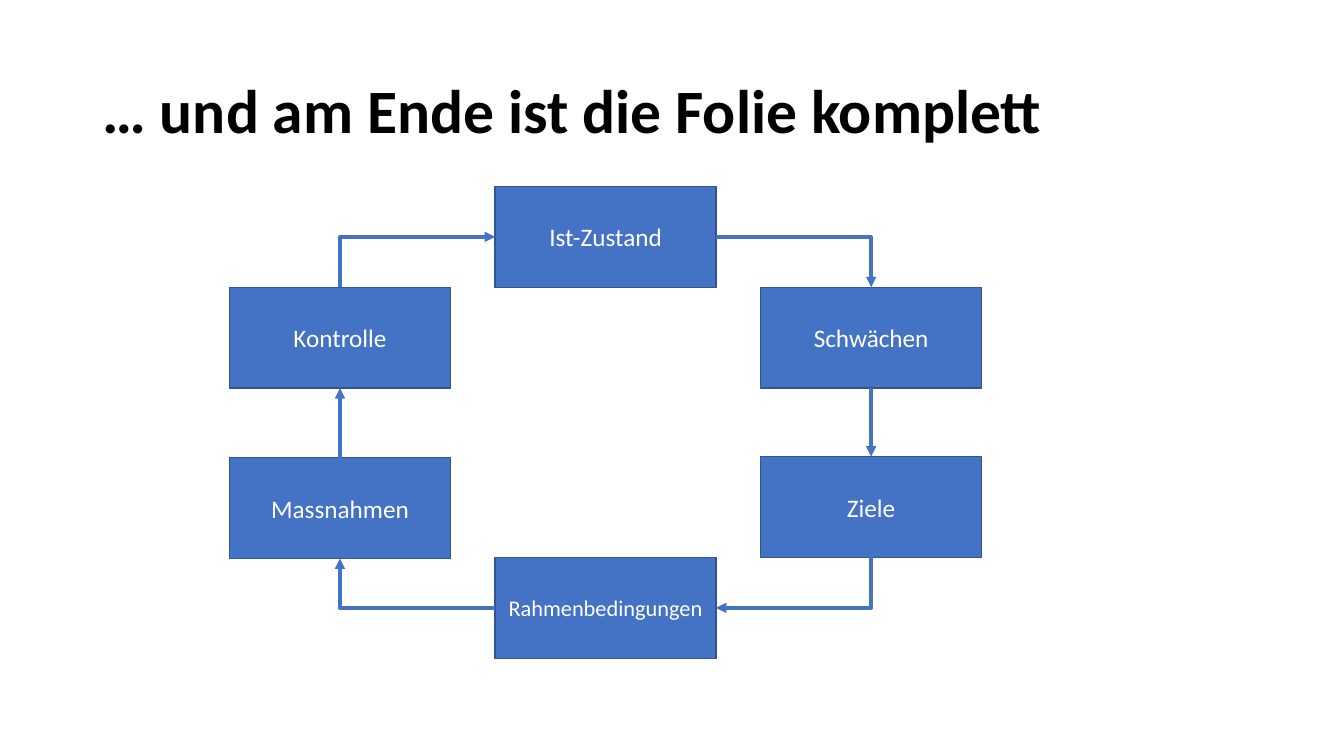
from lxml import etree
from pptx import Presentation
from pptx.dml.color import RGBColor
from pptx.enum.shapes import MSO_CONNECTOR, MSO_SHAPE
from pptx.enum.text import MSO_ANCHOR, PP_ALIGN
from pptx.oxml.ns import qn
from pptx.util import Pt

RECTANGLE = MSO_SHAPE.RECTANGLE
STRAIGHT, ELBOW = MSO_CONNECTOR.STRAIGHT, MSO_CONNECTOR.ELBOW
MIDDLE = MSO_ANCHOR.MIDDLE
LEFT, CENTER = PP_ALIGN.LEFT, PP_ALIGN.CENTER
TOP_SIDE, LEFT_SIDE, BOTTOM_SIDE, RIGHT_SIDE = range(4)

COLORS = {"title": "000000", "step": "4472C4", "border": "325491", "label": "FFFFFF"}
TITLE_FORMAT = {"name": "Calibri", "size": Pt(44), "bold": True}
LABEL_FORMAT = {"name": "Calibri", "size": Pt(18)}
LONG_LABEL_FORMAT = {**LABEL_FORMAT, "size": Pt(16)}

STEP_WIDTH, STEP_HEIGHT = 157.7, 72
STEPS = {
    "Ist-Zustand": (1, 0, LABEL_FORMAT),
    "Schwächen": (2, 72, LABEL_FORMAT),
    "Ziele": (2, 193, LABEL_FORMAT),
    "Rahmenbedingungen": (1, 265, LONG_LABEL_FORMAT),
    "Kontrolle": (0, 72, LABEL_FORMAT),
    "Massnahmen": (0, 193.7, LABEL_FORMAT),
}
ARROWS = [
    ("Ist-Zustand", RIGHT_SIDE, "Schwächen", TOP_SIDE, 0),
    ("Schwächen", BOTTOM_SIDE, "Ziele", TOP_SIDE, None),
    ("Ziele", BOTTOM_SIDE, "Rahmenbedingungen", RIGHT_SIDE, 90),
    ("Rahmenbedingungen", LEFT_SIDE, "Massnahmen", BOTTOM_SIDE, 180),
    ("Massnahmen", TOP_SIDE, "Kontrolle", BOTTOM_SIDE, None),
    ("Kontrolle", TOP_SIDE, "Ist-Zustand", LEFT_SIDE, 270),
]


def rgb(role):
    return RGBColor.from_string(COLORS[role])


def write_text(frame, text, font_format, color, alignment):
    frame.word_wrap = True
    frame.vertical_anchor = MIDDLE
    paragraph = frame.paragraphs[0]
    paragraph.alignment = alignment
    run = paragraph.add_run()
    run.text = text
    for attribute, value in font_format.items():
        setattr(run.font, attribute, value)
    run.font.color.rgb = rgb(color)
    return paragraph


def add_title(slide, left, top, width, height):
    title = slide.shapes.add_textbox(Pt(left), Pt(top), Pt(width), Pt(height))
    heading = write_text(title.text_frame, "… und am Ende ist die Folie komplett",
                         TITLE_FORMAT, "title", LEFT)
    heading.line_spacing = 0.9


def add_step(slide, label, left, top, label_format):
    step = slide.shapes.add_shape(RECTANGLE, Pt(left), Pt(top),
                                  Pt(STEP_WIDTH), Pt(STEP_HEIGHT))
    step.shadow.inherit = False
    step.fill.solid()
    step.fill.fore_color.rgb = rgb("step")
    step.line.color.rgb = rgb("border")
    step.line.width = Pt(1)
    write_text(step.text_frame, label, label_format, "label", CENTER)
    return step


def turn_corner(arrow, turn):
    left, top, width, height = arrow.left, arrow.top, arrow.width, arrow.height
    if turn in (90, 270):
        left += (width - height) // 2
        top += (height - width) // 2
        width, height = height, width
    for attribute, value in zip(("left", "top", "width", "height"),
                                (left, top, width, height)):
        setattr(arrow, attribute, value)
    properties = arrow._element.spPr
    transform = properties.find(qn("a:xfrm"))
    for flip in ("flipH", "flipV"):
        transform.attrib.pop(flip, None)
    transform.set("rot", str(turn * 60000))
    properties.find(qn("a:prstGeom")).set("prst", "bentConnector2")


def add_arrow(slide, source, source_side, target, target_side, turn):
    kind = STRAIGHT if turn is None else ELBOW
    arrow = slide.shapes.add_connector(kind, 0, 0, 0, 0)
    arrow.begin_connect(source, source_side)
    arrow.end_connect(target, target_side)
    if turn is not None:
        turn_corner(arrow, turn)
    arrow.line.color.rgb = rgb("step")
    arrow.line.width = Pt(2.5)
    properties = arrow._element.spPr
    etree.SubElement(properties.find(qn("a:ln")), qn("a:tailEnd"), type="triangle")
    etree.SubElement(properties, qn("a:effectLst"))


def add_cycle(slide, left, top, width):
    column_pitch = (width - STEP_WIDTH) / 2
    steps = {
        label: add_step(slide, label, left + column * column_pitch, top + offset, label_format)
        for label, (column, offset, label_format) in STEPS.items()
    }
    for source, source_side, target, target_side, turn in ARROWS:
        add_arrow(slide, steps[source], source_side, steps[target], target_side, turn)


def main():
    presentation = Presentation()
    presentation.slide_width, presentation.slide_height = Pt(960), Pt(540)
    slide = presentation.slides.add_slide(presentation.slide_layouts[6])
    add_title(slide, 66, 28.75, 828, 104.4)
    add_cycle(slide, 164, 133.2, 537.1)
    presentation.save("out.pptx")


if __name__ == "__main__":
    main()
